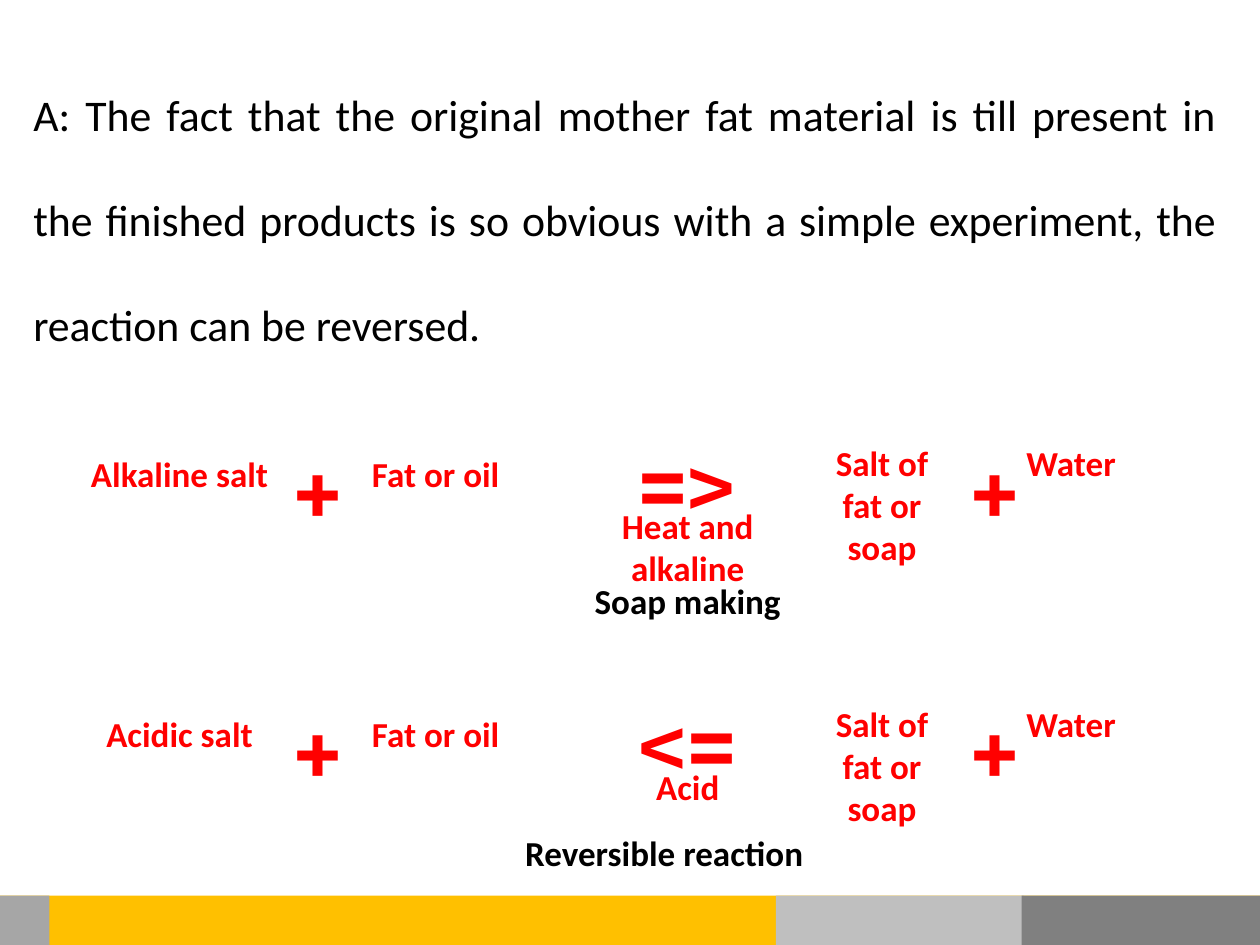
from pptx import Presentation
from pptx.dml.color import RGBColor
from pptx.enum.shapes import MSO_SHAPE
from pptx.enum.text import MSO_AUTO_SIZE, PP_ALIGN
from pptx.util import Inches, Pt

# The slide is a grid of 120 columns by 90 rows, twelve to the inch
COLUMNS, ROWS, CELL = 120, 90, 1 / 12
RED, BLACK = "FF0000", "000000"
LABEL = dict(size=Pt(20), bold=True)
SIGN = dict(size=Pt(48), bold=True)
BODY = dict(size=Pt(25), bold=False)

# Parts of a reaction: column, row offset, width, height, format
PARTS = {
    "product": (77, 0, 14, 13.3, LABEL),
    "fat": (33, 1, 17, 5.25, LABEL),
    "salt": (6, 1, 22.2, 5.25, LABEL),
    "arrow": (56, -1.7, 19, 10.9, SIGN),
    "left plus": (26, -1, 8.5, 10.9, SIGN),
    "water": (95, 0, 14, 5.25, LABEL),
    "right plus": (90.5, -1, 8.5, 10.9, SIGN),
    "agent": (57, 6, 17, 9.25, LABEL),
}
SHARED = {
    "product": "Salt of fat or soap",
    "fat": "Fat or oil",
    "left plus": "+",
    "water": "Water",
    "right plus": "+",
}
# Right-to-left paragraphs mirror the arrow signs: "<=" shows as "=>"
REACTIONS = [
    dict(row=41.5, caption=("Soap making", 38.25, 54.6),
         words={"salt": "Alkaline salt", "arrow": "<=", "agent": "Heat and alkaline"}),
    dict(row=66.3, caption=("Reversible reaction", 36, 78.6),
         words={"salt": "Acidic salt", "arrow": "=>", "agent": "Acid"}),
]
STATEMENT = ("A: The fact that the original mother fat material is till present in "
             "the finished products is so obvious with a simple experiment, the "
             "reaction can be reversed.")
# Footer bars: left column, right column, colour
BARS = [(0, 120, "FFC000"), (73.9, 97.5, "BFBFBF"),
        (97.3, 120, "808080"), (0, 4.7, "A6A6A6")]


def rgb(value):
    return RGBColor.from_string(value)


def grid(*cells):
    return [Inches(cell * CELL) for cell in cells]


def add_text(shapes, text, place, colour, font):
    box = shapes.add_textbox(*grid(*place))
    frame = box.text_frame
    frame.word_wrap = True
    frame.auto_size = MSO_AUTO_SIZE.SHAPE_TO_FIT_TEXT
    para = frame.paragraphs[0]
    span = para.add_run()
    span.text = text
    for name, value in dict(font, name="Calibri").items():
        setattr(span.font, name, value)
    span.font.color.rgb = rgb(colour)
    return para


def add_centred(shapes, text, place, colour, font):
    para = add_text(shapes, text, place, colour, font)
    para.alignment = PP_ALIGN.CENTER
    para._p.get_or_add_pPr().set("rtl", "1")


def add_statement(page):
    para = add_text(page.shapes, STATEMENT, (2, 2.75, 115, 30.1), BLACK, BODY)
    para.alignment = PP_ALIGN.JUSTIFY
    para.line_spacing = 2.0


def add_reaction(page, row, caption, words):
    group = page.shapes.add_group_shape()
    texts = SHARED | words
    for part, (column, offset, width, height, font) in PARTS.items():
        add_centred(group.shapes, texts[part],
                    (column, row + offset, width, height), RED, font)
    text, column, top = caption
    add_centred(group.shapes, text, (column, top, 54.5, 5.25), BLACK, LABEL)


def add_bar(page, left, right, colour):
    top = 85.3
    bar = page.shapes.add_shape(
        MSO_SHAPE.RECTANGLE, *grid(left, top, right - left, ROWS - top))
    bar.shadow.inherit = False
    bar.fill.solid()
    bar.fill.fore_color.rgb = rgb(colour)
    bar.line.fill.background()


def main():
    deck = Presentation()
    deck.slide_width, deck.slide_height = grid(COLUMNS, ROWS)
    page = deck.slides.add_slide(deck.slide_layouts[6])
    add_statement(page)
    for reaction in REACTIONS:
        add_reaction(page, **reaction)
    for bar in BARS:
        add_bar(page, *bar)
    deck.save("out.pptx")


if __name__ == "__main__":
    main()
